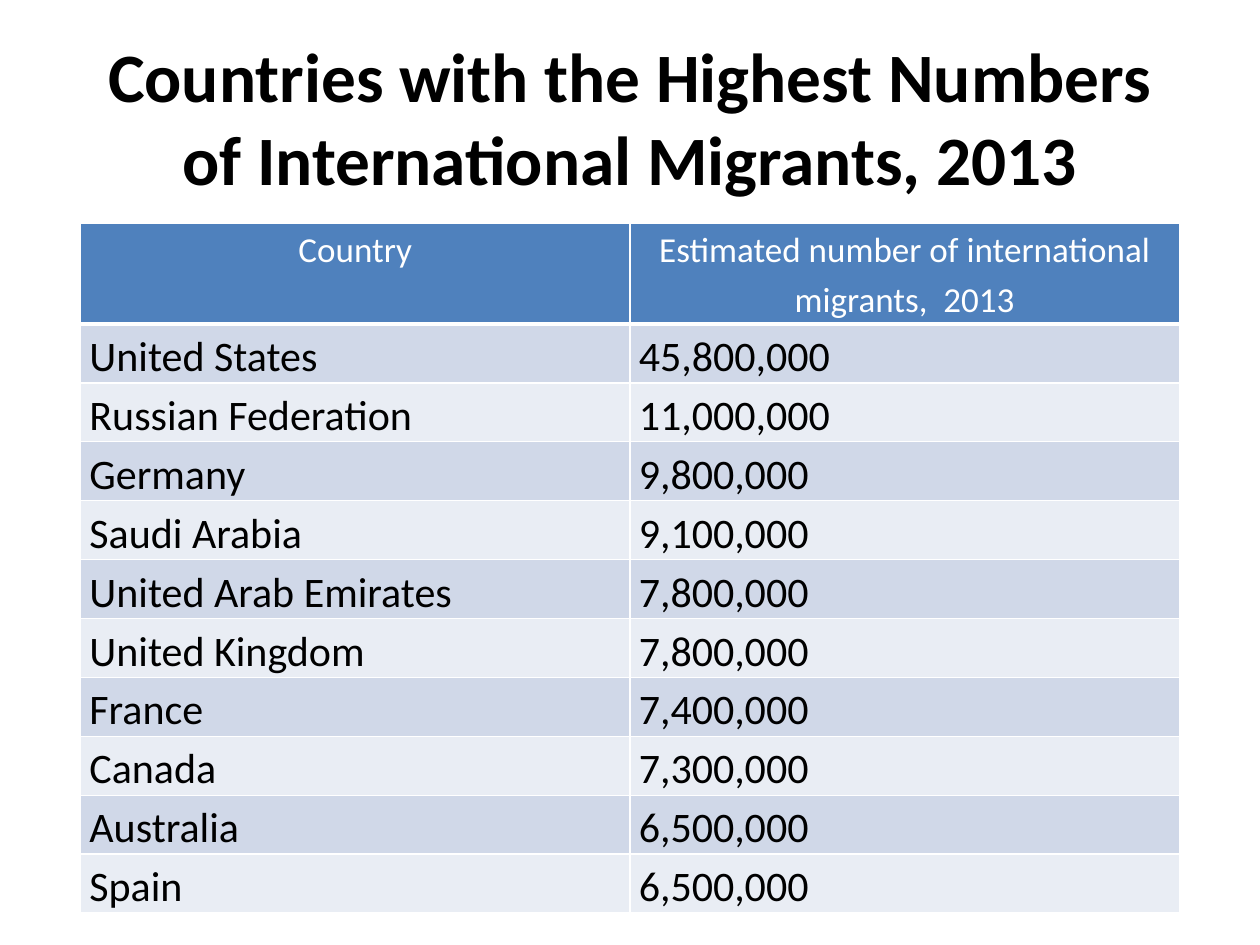
from dataclasses import dataclass

from lxml import etree
from pptx import Presentation
from pptx.dml.color import RGBColor
from pptx.enum import text
from pptx.oxml import ns
from pptx.util import Inches, Pt


@dataclass(frozen=True)
class Theme:
    font: str = "Calibri"
    ink: str = "000000"
    paper: str = "FFFFFF"
    header: str = "4F81BD"
    bands: tuple = ("D0D8E8", "E9EDF4")
    title_size: float = 39.6
    header_size: float = 20
    body_size: float = 24
    rule: float = 1
    header_rule: float = 3


THEME = Theme()
TITLE = "Countries with the Highest Numbers of International Migrants, 2013"
HEADINGS = ("Country", "Estimated number of international migrants,  2013")
MIGRANTS = (
    ("United States", 45_800_000),
    ("Russian Federation", 11_000_000),
    ("Germany", 9_800_000),
    ("Saudi Arabia", 9_100_000),
    ("United Arab Emirates", 7_800_000),
    ("United Kingdom", 7_800_000),
    ("France", 7_400_000),
    ("Canada", 7_300_000),
    ("Australia", 6_500_000),
    ("Spain", 6_500_000),
)


def write_text(frame, words, size, color=THEME.ink, bold=False,
               align=text.PP_ALIGN.LEFT, spacing=None):
    paragraph = frame.paragraphs[0]
    paragraph.alignment = align
    paragraph.line_spacing = spacing
    run = paragraph.add_run()
    run.text = words
    run.font.name = THEME.font
    run.font.size = Pt(size)
    run.font.bold = bold
    run.font.color.rgb = RGBColor.from_string(color)


def set_borders(cell, color, bottom):
    properties = cell._tc.get_or_add_tcPr()
    widths = {"lnL": THEME.rule, "lnR": THEME.rule, "lnT": THEME.rule, "lnB": bottom}
    for side, width in widths.items():
        line = etree.SubElement(properties, ns.qn(f"a:{side}"), w=str(Pt(width)))
        fill = etree.SubElement(line, ns.qn("a:solidFill"))
        etree.SubElement(fill, ns.qn("a:srgbClr"), val=color)


def format_cell(cell, words, fill, bottom=THEME.rule, **text_format):
    cell.margin_left = cell.margin_right = Inches(0.07)
    cell.margin_top = cell.margin_bottom = 0
    set_borders(cell, THEME.paper, bottom)
    cell.fill.solid()
    cell.fill.fore_color.rgb = RGBColor.from_string(fill)
    write_text(cell.text_frame, words, spacing=1.15, **text_format)


def place_title(slide, left, top, width, height):
    title = slide.shapes.title
    title.left, title.top, title.width, title.height = left, top, width, height
    frame = title.text_frame
    frame.word_wrap = True
    frame.vertical_anchor = text.MSO_ANCHOR.MIDDLE
    write_text(frame, TITLE, THEME.title_size, bold=True, align=text.PP_ALIGN.CENTER)


def place_migrant_table(slide, left, top, width, height):
    table = slide.shapes.add_table(
        len(MIGRANTS) + 1, len(HEADINGS), left, top, width, height).table
    header_height = Inches(0.8)
    for column in table.columns:
        column.width = width // len(HEADINGS)
    for row in table.rows:
        row.height = (height - header_height) // len(MIGRANTS)
    table.rows[0].height = header_height

    for column, heading in enumerate(HEADINGS):
        format_cell(table.cell(0, column), heading, THEME.header, THEME.header_rule,
                    size=THEME.header_size, color=THEME.paper,
                    align=text.PP_ALIGN.CENTER)
    for index, (country, number) in enumerate(MIGRANTS):
        band = THEME.bands[index % len(THEME.bands)]
        for column, words in enumerate((country, f"{number:,}")):
            format_cell(table.cell(index + 1, column), words, band,
                        size=THEME.body_size)


def main():
    presentation = Presentation()
    presentation.slide_width, presentation.slide_height = Inches(10), Inches(7.5)
    slide = presentation.slides.add_slide(presentation.slide_layouts[5])
    place_title(slide, Inches(0.5), Inches(0.3), Inches(9), Inches(1.25))
    place_migrant_table(slide, Inches(0.64), Inches(1.77), Inches(8.72), Inches(5.1))
    presentation.save("out.pptx")


if __name__ == "__main__":
    main()
